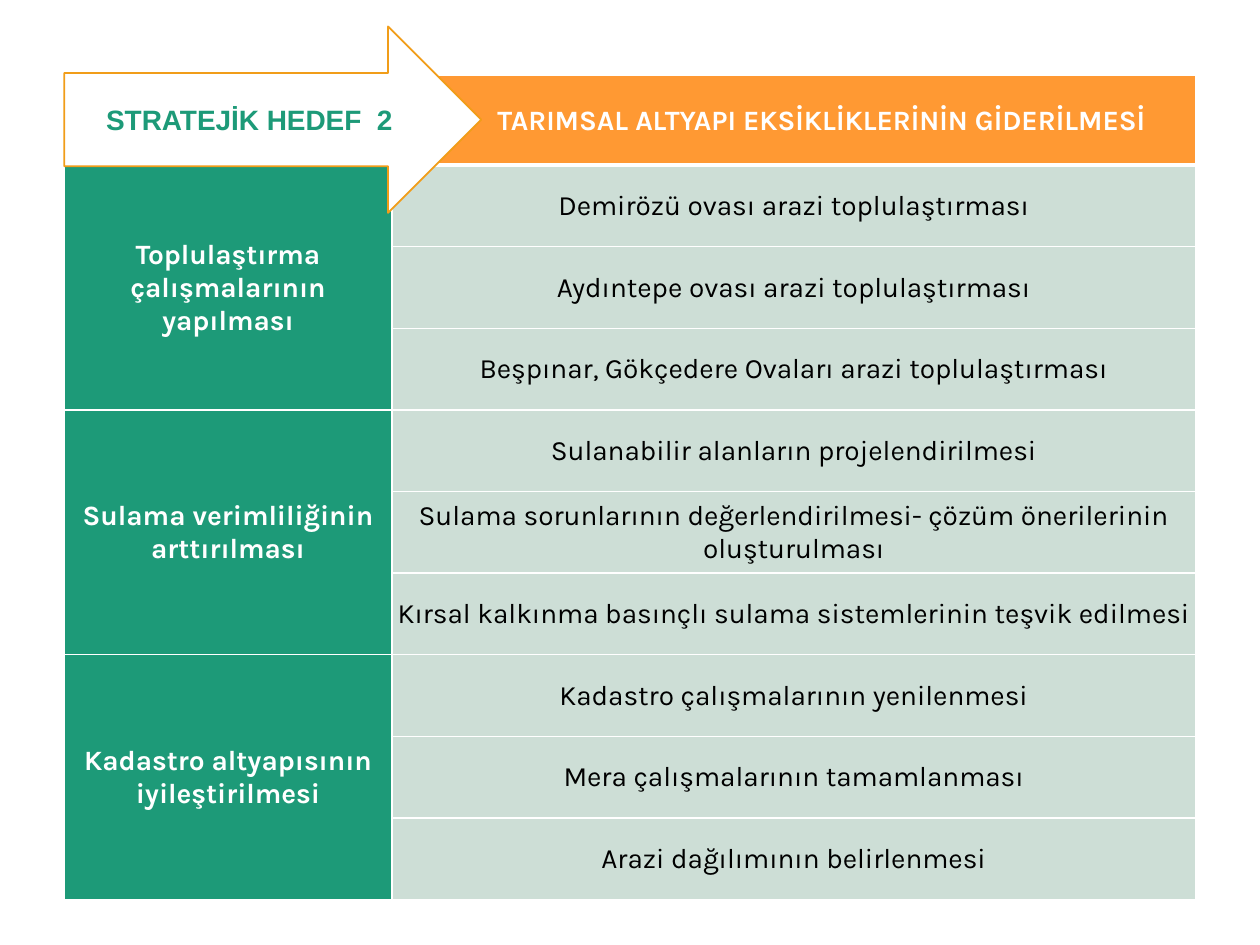
from dataclasses import dataclass

import pptx
import pptx.dml.color
import pptx.enum.shapes
import pptx.enum.text
import pptx.oxml
import pptx.oxml.ns
import pptx.util
from pptx.util import Inches


@dataclass(frozen=True)
class Theme:
    green: str = "1D9A78"
    pale_green: str = "CDDED6"
    orange: str = "FF9933"
    outline: str = "F19D19"
    white: str = "FFFFFF"
    black: str = "000000"
    table_font: str = "Karla"
    goal_font: str = "Arial"
    size: int = 16
    thin: int = 1
    thick: int = 3


@dataclass(frozen=True)
class Objective:
    name: str
    actions: tuple[str, ...]


THEME = Theme()
GOAL = "STRATEJİK HEDEF  2"
GOAL_TITLE = "TARIMSAL ALTYAPI EKSİKLİKLERİNİN GİDERİLMESİ"
OBJECTIVES = (
    Objective("Toplulaştırma çalışmalarının yapılması", (
        "Demirözü ovası arazi toplulaştırması",
        "Aydıntepe ovası arazi toplulaştırması",
        "Beşpınar, Gökçedere Ovaları arazi toplulaştırması",
    )),
    Objective("Sulama verimliliğinin arttırılması", (
        "Sulanabilir alanların projelendirilmesi",
        "Sulama sorunlarının değerlendirilmesi- çözüm önerilerinin oluşturulması",
        "Kırsal kalkınma basınçlı sulama sistemlerinin teşvik edilmesi",
    )),
    Objective("Kadastro altyapısının iyileştirilmesi", (
        "Kadastro çalışmalarının yenilenmesi",
        "Mera çalışmalarının tamamlanması",
        "Arazi dağılımının belirlenmesi",
    )),
)
LEFT, TOP, HEIGHT = 0.51, 0.6, 6.54
COLUMN_WIDTHS = (2.6, 6.38)
HEADER_HEIGHT = 0.71


def rgb(color: str) -> pptx.dml.color.RGBColor:
    return pptx.dml.color.RGBColor.from_string(color)


def write(frame, text: str, color: str, font: str, bold: bool) -> None:
    paragraph = frame.paragraphs[0]
    paragraph.alignment = pptx.enum.text.PP_ALIGN.CENTER
    run = paragraph.add_run()
    run.text = text
    run.font.name = font
    run.font.size = pptx.util.Pt(THEME.size)
    run.font.bold = bold
    run.font.color.rgb = rgb(color)


def style_cell(cell, fill: str, top: int = THEME.thin, bottom: int = THEME.thin) -> None:
    """Draw the white cell borders (widths in points), then the fill, as the schema orders them."""
    properties = cell._tc.get_or_add_tcPr()
    for side, width in (("L", THEME.thin), ("R", THEME.thin), ("T", top), ("B", bottom)):
        properties.append(pptx.oxml.parse_xml(
            f'<a:ln{side} {pptx.oxml.ns.nsdecls("a")} w="{pptx.util.Pt(width)}">'
            f'<a:solidFill><a:srgbClr val="{THEME.white}"/></a:solidFill></a:ln{side}>'
        ))
    cell.fill.solid()
    cell.fill.fore_color.rgb = rgb(fill)
    cell.vertical_anchor = pptx.enum.text.MSO_ANCHOR.MIDDLE
    cell.margin_left = cell.margin_right = cell.margin_top = Inches(0.01)
    cell.margin_bottom = 0


def add_objectives_table(slide) -> None:
    action_count = sum(len(objective.actions) for objective in OBJECTIVES)
    table = slide.shapes.add_table(
        action_count + 1, len(COLUMN_WIDTHS), Inches(LEFT), Inches(TOP),
        Inches(sum(COLUMN_WIDTHS)), Inches(HEIGHT),
    ).table
    table.first_row = table.horz_banding = False
    for column, width in zip(table.columns, COLUMN_WIDTHS):
        column.width = Inches(width)
    for row in table.rows:
        row.height = Inches((HEIGHT - HEADER_HEIGHT) / action_count)
    table.rows[0].height = Inches(HEADER_HEIGHT)

    style_cell(table.cell(0, 0), THEME.green, bottom=THEME.thick)
    header = table.cell(0, 1)
    style_cell(header, THEME.orange, bottom=THEME.thick)
    header.margin_left = Inches(0.45)  # clears the arrow tip
    write(header.text_frame, GOAL_TITLE, THEME.white, THEME.table_font, True)

    row_index = 1
    for objective in OBJECTIVES:
        first_row = row_index
        for action in objective.actions:
            top = THEME.thick if row_index == 1 else THEME.thin
            style_cell(table.cell(row_index, 0), THEME.green, top)
            action_cell = table.cell(row_index, 1)
            style_cell(action_cell, THEME.pale_green, top)
            write(action_cell.text_frame, action, THEME.black, THEME.table_font, False)
            row_index += 1
        name_cell = table.cell(first_row, 0)
        name_cell.merge(table.cell(row_index - 1, 0))
        write(name_cell.text_frame, objective.name, THEME.white, THEME.table_font, True)


def add_goal_arrow(slide) -> None:
    arrow = slide.shapes.add_shape(
        pptx.enum.shapes.MSO_SHAPE.RIGHT_ARROW,
        Inches(LEFT), Inches(0.21), Inches(3.31), Inches(1.48),
    )
    arrow.shadow.inherit = False
    arrow.fill.solid()
    arrow.fill.fore_color.rgb = rgb(THEME.white)
    arrow.line.color.rgb = rgb(THEME.outline)
    arrow.line.width = pptx.util.Pt(THEME.thin)
    arrow.text_frame.word_wrap = True
    arrow.text_frame.vertical_anchor = pptx.enum.text.MSO_ANCHOR.MIDDLE
    write(arrow.text_frame, GOAL, THEME.green, THEME.goal_font, True)


def main() -> None:
    presentation = pptx.Presentation()
    presentation.slide_width = Inches(10)
    presentation.slide_height = Inches(7.5)
    slide = presentation.slides.add_slide(presentation.slide_layouts.get_by_name("Blank"))
    add_objectives_table(slide)
    add_goal_arrow(slide)
    presentation.save("out.pptx")


if __name__ == "__main__":
    main()
